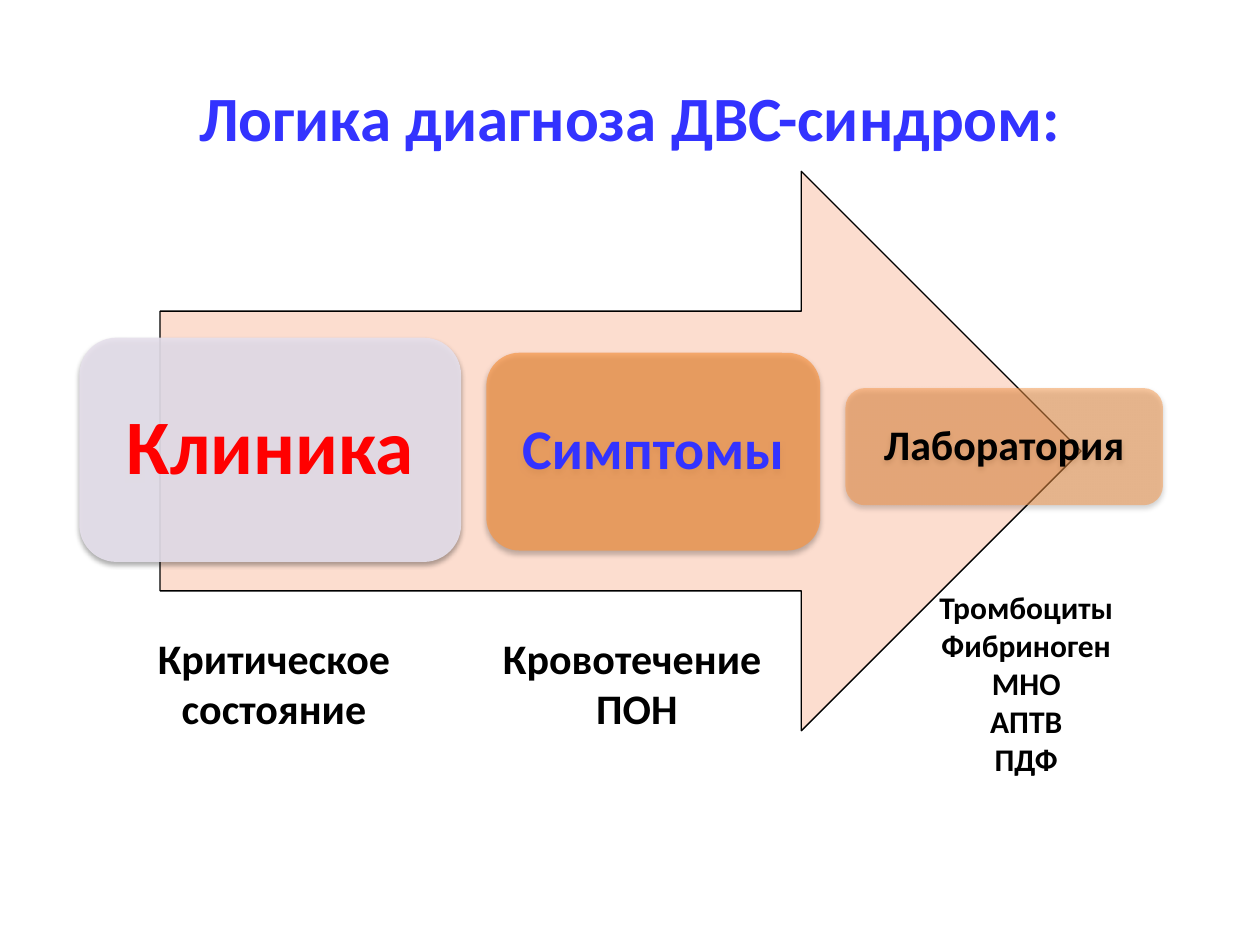
import pptx
import pptx.util
import pptx.dml.color
import pptx.enum.shapes
import pptx.enum.text
import pptx.oxml
import pptx.oxml.ns

Pt = pptx.util.Pt
RGB = pptx.dml.color.RGBColor.from_string
Kind = pptx.enum.shapes.MSO_SHAPE

THEME = {
    "font": "Calibri", "ink": "000000", "blue": "3333FF", "red": "FF0000",
    "arrow": "FCDDCF", "lilac": "E6E0EC", "amber": "F79646",
    "title": 36, "huge": 44, "large": 32, "mid": 24, "small": 18,
}

TITLE = "Логика диагноза ДВС-синдром:"
STEPS = [
    {"text": "Клиника", "size": "huge", "ink": "red", "fill": "lilac",
     "alpha": 90, "top": 35.73, "wide": 30.3, "high": 23.73},
    {"text": "Симптомы", "size": "large", "ink": "blue", "fill": "amber",
     "alpha": 70, "top": 37.33, "wide": 26.5, "high": 20.93},
    {"text": "Лаборатория", "size": "mid", "ink": "ink", "fill": "amber",
     "alpha": 50, "top": 41.07, "wide": 25.2, "high": 12.4},
]
NOTES = [
    (["Критическое состояние"], "mid", (10.1, 66.27, 23.3, 12.13)),
    (["Кровотечение ", "ПОН"], "mid", (38.9, 66.27, 23.3, 12.13)),
    (["Тромбоциты", "Фибриноген", "МНО", "АПТВ", "ПДФ"], "small",
     (69.8, 61.6, 23.3, 21.6)),
]
LEFT, GAP = 6.3, 2

deck = pptx.Presentation()
deck.slide_width = pptx.util.Inches(10)
deck.slide_height = pptx.util.Inches(7.5)
slide = deck.slides.add_slide(deck.slide_layouts[5])


def place(left, top, wide, high):
    w, h = deck.slide_width, deck.slide_height
    return [int(part * full / 100) for part, full in
            ((left, w), (top, h), (wide, w), (high, h))]


def write(shape, lines, size, ink="ink", space=None):
    frame = shape.text_frame
    frame.word_wrap = True
    for i, line in enumerate(lines):
        para = frame.add_paragraph() if i else frame.paragraphs[0]
        para.alignment = pptx.enum.text.PP_ALIGN.CENTER
        para.line_spacing = space
        run = para.add_run()
        run.text = line
        run.font.name = THEME["font"]
        run.font.size = Pt(THEME[size])
        run.font.bold = True
        run.font.color.rgb = RGB(THEME[ink])
    return frame


def draw(kind, area, fill):
    shape = slide.shapes.add_shape(kind, *place(*area))
    shape.shadow.inherit = False
    shape.fill.solid()
    shape.fill.fore_color.rgb = RGB(THEME[fill])
    return shape


def soften(shape, alpha):
    props = shape._element.spPr
    tint = props.find(".//" + pptx.oxml.ns.qn("a:srgbClr"))
    tint.append(pptx.oxml.parse_xml(
        f'<a:alpha {pptx.oxml.ns.nsdecls("a")} val="{alpha * 1000}"/>'))
    props.find(pptx.oxml.ns.qn("a:effectLst")).append(pptx.oxml.parse_xml(
        f'<a:outerShdw {pptx.oxml.ns.nsdecls("a")} blurRad="{Pt(3.1)}" '
        f'dist="{Pt(1.8)}" dir="5400000" rotWithShape="0">'
        f'<a:srgbClr val="{THEME["ink"]}"><a:alpha val="35000"/></a:srgbClr>'
        '</a:outerShdw>'))


def main():
    title = slide.shapes.title
    title.left, title.top, title.width, title.height = place(5, 4, 90, 16.67)
    frame = write(title, [TITLE], "title", "blue")
    frame.vertical_anchor = pptx.enum.text.MSO_ANCHOR.MIDDLE

    arrow = draw(Kind.RIGHT_ARROW, (12.7, 18.13, 73.1, 59.2), "arrow")
    arrow.line.color.rgb = RGB(THEME["ink"])
    arrow.line.width = Pt(0.75)

    left = LEFT
    for step in STEPS:
        area = (left, step["top"], step["wide"], step["high"])
        box = draw(Kind.ROUNDED_RECTANGLE, area, step["fill"])
        box.line.fill.background()
        soften(box, step["alpha"])
        frame = write(box, [step["text"]], step["size"], step["ink"], 0.9)
        frame.vertical_anchor = pptx.enum.text.MSO_ANCHOR.MIDDLE
        left += step["wide"] + GAP

    for lines, size, area in NOTES:
        write(slide.shapes.add_textbox(*place(*area)), lines, size)

    deck.save("out.pptx")


if __name__ == "__main__":
    main()
